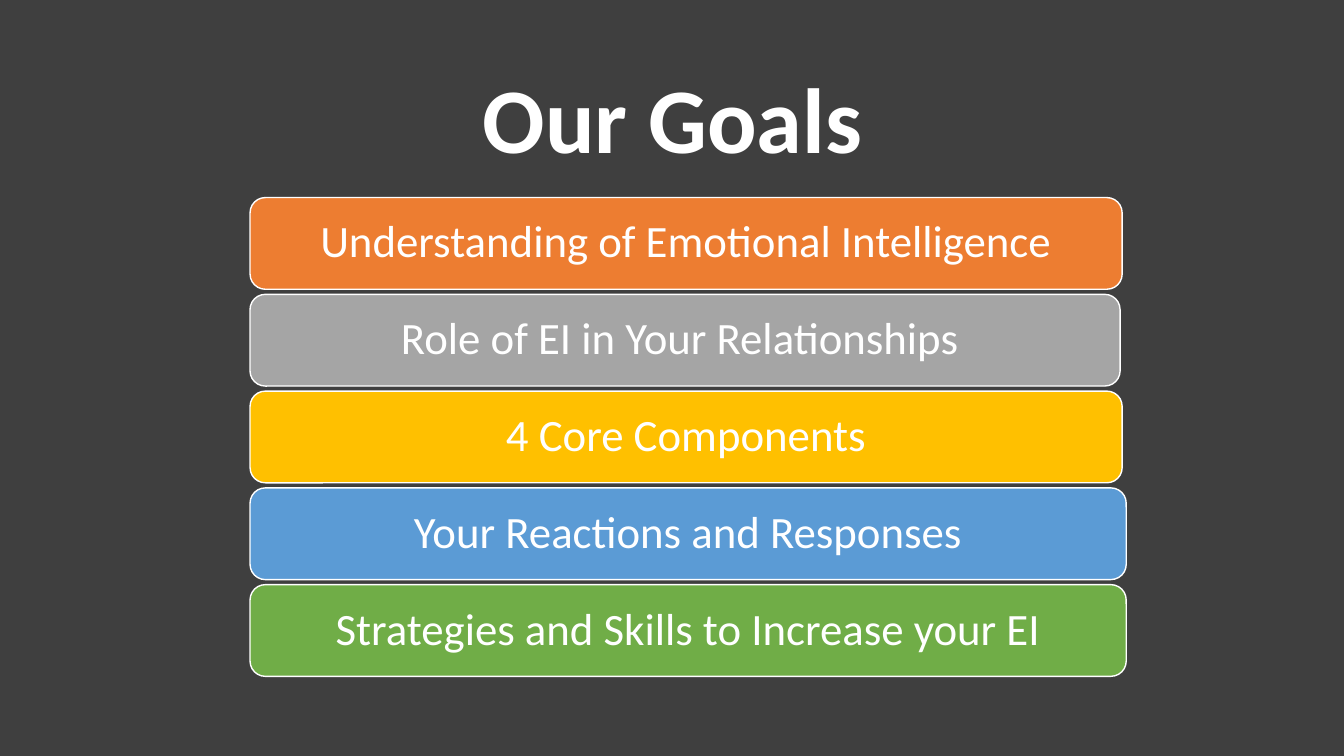
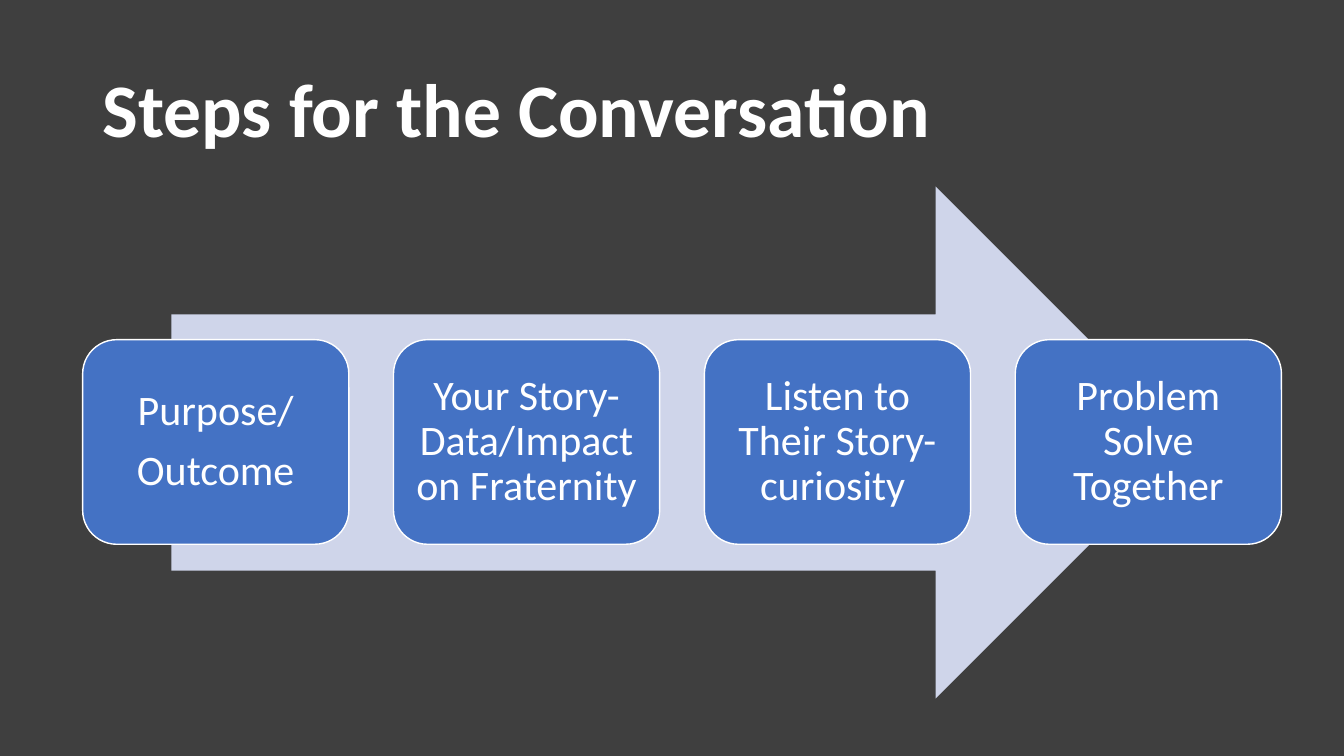
"""Build two slides: a stack of goals and the steps of a conversation."""
import pptx
import pptx.util
import pptx.dml.color
import pptx.enum.shapes
import pptx.enum.text

Inches, Pt = pptx.util.Inches, pptx.util.Pt
SHAPE = pptx.enum.shapes.MSO_SHAPE
ALIGN = pptx.enum.text.PP_ALIGN
MIDDLE = pptx.enum.text.MSO_ANCHOR.MIDDLE

FONT = "Calibri"
COLORS = {
    "background": "3F3F3F", "white": "FFFFFF", "orange": "ED7D31", "gray": "A5A5A5",
    "gold": "FFC000", "sky": "5B9BD5", "green": "70AD47", "blue": "4472C4", "pale": "CFD5EA",
}
GOALS = [
    ("Understanding of Emotional Intelligence", "orange", 8.65),
    ("Role of EI in Your Relationships ", "gray", 8.63),
    ("4 Core Components", "gold", 8.65),
    ("Your Reactions and Responses", "sky", 8.69),
    ("Strategies and Skills to Increase your EI", "green", 8.69),
]
STEPS = [
    ["Purpose/", "Outcome"],
    ["Your Story-Data/Impact on Fraternity "],
    ["Listen to Their Story-curiosity "],
    ["Problem Solve Together"],
]
GOAL_LEFT, GOAL_TOP, GOAL_HEIGHT, GOAL_PITCH = 2.48, 1.96, 0.91, 0.96
STEP_LEFT, STEP_RIGHT, STEP_TOP, STEP_WIDTH, STEP_HEIGHT = 0.82, 12.71, 3.37, 2.64, 2.03


def rgb(name):
    return pptx.dml.color.RGBColor.from_string(COLORS[name])


def write(sp, lines, size, align=ALIGN.CENTER, bold=False, insets=(0.1, 0.05)):
    tf = sp.text_frame
    tf.word_wrap = True
    tf.vertical_anchor = MIDDLE
    tf.margin_left = tf.margin_right = Inches(insets[0])
    tf.margin_top = tf.margin_bottom = Inches(insets[1])
    for i, line in enumerate(lines):
        p = tf.add_paragraph() if i else tf.paragraphs[0]
        p.text = line
        p.alignment = align
        p.line_spacing = 0.9
        if i:
            p.space_before = Pt(round(size * 0.35, 1))
        p.font.name = FONT
        p.font.size = Pt(size)
        p.font.bold = bold
        p.font.color.rgb = rgb("white")


def add_slide(prs, title, size, top, height, align):
    s = prs.slides.add_slide(prs.slide_layouts[6])
    s.background.fill.solid()
    s.background.fill.fore_color.rgb = rgb("background")
    sp = s.shapes.add_textbox(Inches(0.92), Inches(top), Inches(11.5), Inches(height))
    write(sp, [title], size, align, bold=True)
    return s


def add_filled(s, kind, box, color, outlined=True):
    sp = s.shapes.add_shape(kind, *map(Inches, box))
    sp.shadow.inherit = False
    sp.fill.solid()
    sp.fill.fore_color.rgb = rgb(color)
    if outlined:
        sp.line.color.rgb = rgb("white")
        sp.line.width = Pt(1)
    else:
        sp.line.fill.background()
    return sp


def build_goals(prs):
    s = add_slide(prs, "Our Goals", 66, 0.61, 1.24, ALIGN.CENTER)
    for i, (text, color, width) in enumerate(GOALS):
        box = (GOAL_LEFT, GOAL_TOP + i * GOAL_PITCH, width, GOAL_HEIGHT)
        bar = add_filled(s, SHAPE.ROUNDED_RECTANGLE, box, color)
        write(bar, [text], 32, insets=(0.13, 0.07))


def build_steps(prs):
    s = add_slide(prs, "Steps for the Conversation", 54, 0.4, 1.45, ALIGN.LEFT)
    add_filled(s, SHAPE.RIGHT_ARROW, (1.7, 1.85, 10.12, 5.08), "pale", outlined=False)
    pitch = (STEP_RIGHT - STEP_WIDTH - STEP_LEFT) / (len(STEPS) - 1)
    for i, lines in enumerate(STEPS):
        box = (STEP_LEFT + i * pitch, STEP_TOP, STEP_WIDTH, STEP_HEIGHT)
        card = add_filled(s, SHAPE.ROUNDED_RECTANGLE, box, "blue")
        write(card, lines, 30, insets=(0.12, 0.12))


def main():
    prs = pptx.Presentation()
    prs.slide_width, prs.slide_height = Inches(13.33), Inches(7.5)
    build_goals(prs)
    build_steps(prs)
    prs.save("out.pptx")


if __name__ == "__main__":
    main()
